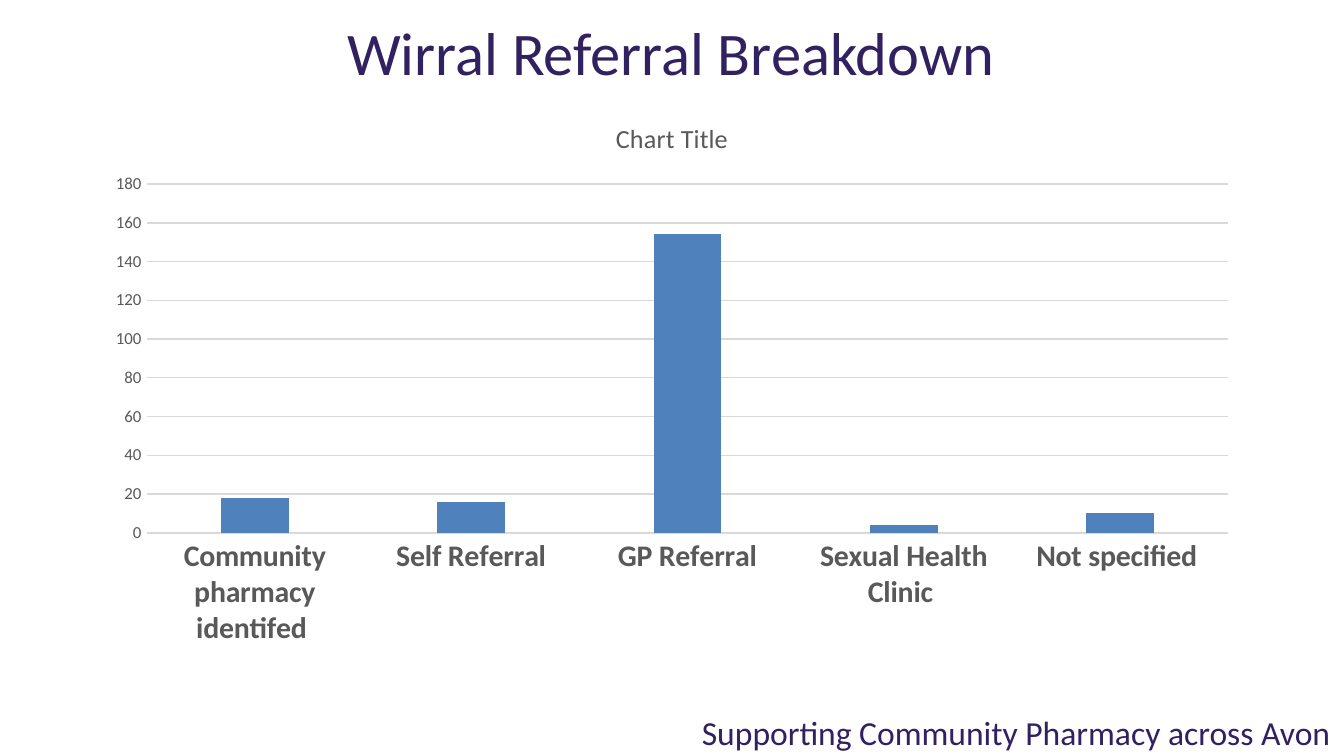
from pptx import Presentation
from pptx.chart.data import CategoryChartData
from pptx.dml.color import RGBColor
from pptx.enum.chart import XL_CHART_TYPE as ChartType, XL_TICK_MARK as TickMark
from pptx.enum.text import MSO_ANCHOR as Anchor, MSO_AUTO_SIZE as AutoSize, PP_ALIGN as Align
from pptx.util import Cm, Pt

PURPLE = RGBColor(0x31, 0x21, 0x60)
BLUE = RGBColor(0x4F, 0x81, 0xBD)
GREY = RGBColor(0x59, 0x59, 0x59)
PALE = RGBColor(0xD9, 0xD9, 0xD9)

REFERRALS = {
    "Community pharmacy identifed ": 18,
    "Self Referral": 16,
    "GP Referral": 154,
    "Sexual Health Clinic ": 4,
    "Not specified ": 10,
}


class ReferralSlide:
    """Hold the slide and its shared style, with a method for each element."""

    font_name = "Calibri"

    def __init__(self, deck):
        self.page = deck.slides.add_slide(deck.slide_layouts[5])

    def apply(self, target, **values):
        for name, value in values.items():
            setattr(target, name, value)

    def style(self, font, size, color, bold=False):
        self.apply(font, name=self.font_name, size=Pt(size), bold=bold)
        font.color.rgb = color

    def fill_text(self, box, text, size, align):
        frame = box.text_frame
        frame.text = text
        self.apply(frame, word_wrap=True, auto_size=AutoSize.NONE,
                   vertical_anchor=Anchor.MIDDLE)
        para = frame.paragraphs[0]
        para.alignment = align
        self.style(para.runs[0].font, size, PURPLE)

    def title(self, text, left, top, width, height):
        box = self.page.shapes.title
        self.apply(box, left=Cm(left), top=Cm(top), width=Cm(width), height=Cm(height))
        self.fill_text(box, text, 32.4, Align.CENTER)

    def footer(self, text, *place):
        box = self.page.shapes.add_textbox(*map(Cm, place))
        self.fill_text(box, text, 18, Align.RIGHT)

    def line(self, line_format):
        line_format.color.rgb = PALE
        line_format.width = Pt(0.75)

    def column_chart(self, heading, values, *place):
        data = CategoryChartData()
        data.categories = list(values)
        data.add_series("Series 1", list(values.values()))
        chart = self.page.shapes.add_chart(
            ChartType.COLUMN_CLUSTERED, *map(Cm, place), data).chart
        self.style(chart.font, 10, GREY)
        self.apply(chart, has_legend=False, has_title=True)
        frame = chart.chart_title.text_frame
        frame.text = heading
        self.style(frame.paragraphs[0].runs[0].font, 14, GREY)

        plot = chart.plots[0]
        self.apply(plot, gap_width=219, overlap=-27, vary_by_categories=False)
        fill = plot.series[0].format.fill
        fill.solid()
        fill.fore_color.rgb = BLUE

        category, value = chart.category_axis, chart.value_axis
        for axis, size, bold in ((category, 16, True), (value, 9, False)):
            self.apply(axis, major_tick_mark=TickMark.NONE, minor_tick_mark=TickMark.NONE)
            self.style(axis.tick_labels.font, size, GREY, bold)
        self.line(category.format.line)
        self.apply(value, minimum_scale=0, maximum_scale=180, major_unit=20)
        value.format.line.fill.background()
        self.line(value.major_gridlines.format.line)


def main():
    deck = Presentation()
    deck.slide_width, deck.slide_height = Cm(25.4), Cm(14.29)
    slide = ReferralSlide(deck)
    slide.footer("Supporting Community Pharmacy across Avon", 6.86, 13.46, 18.54, 0.76)
    slide.title("Wirral Referral Breakdown", 3.5, 0.13, 18.36, 1.68)
    slide.column_chart("Chart Title", REFERRALS, 1.75, 1.83, 21.9, 10.62)
    deck.save("out.pptx")


if __name__ == "__main__":
    main()
